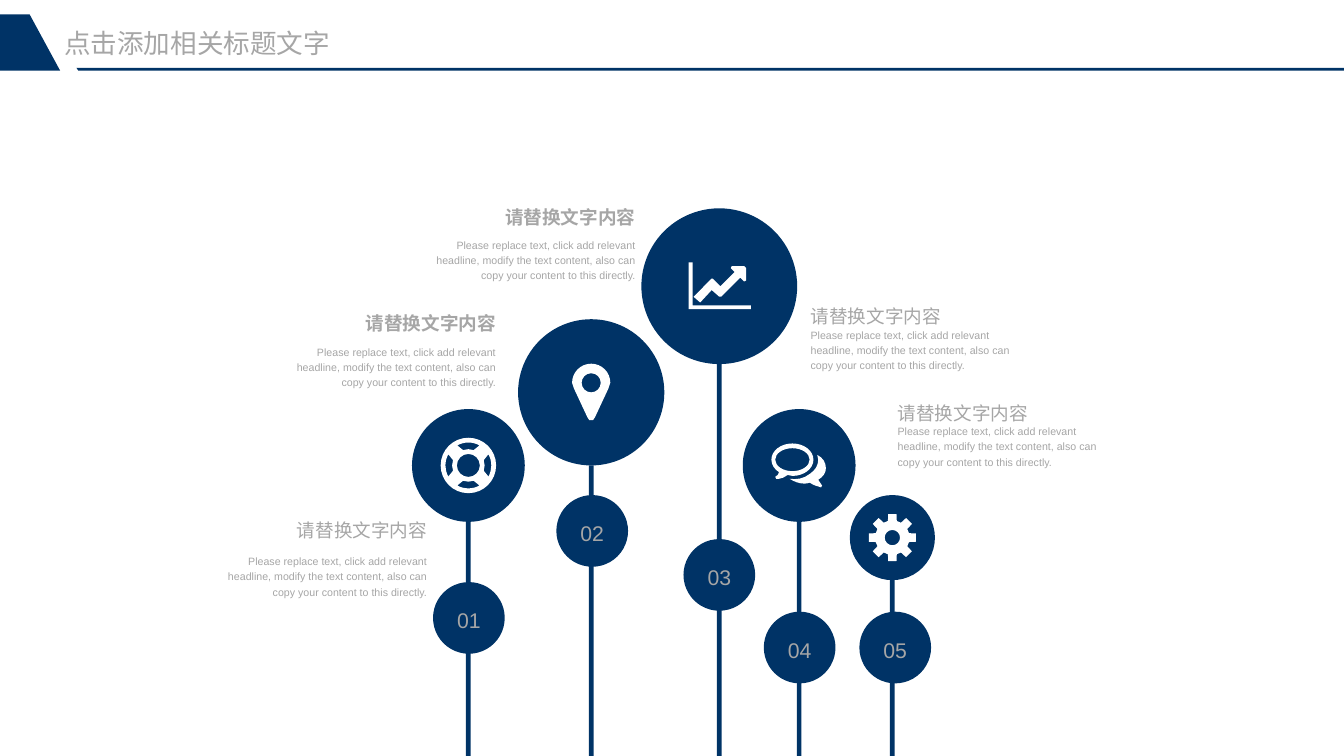
from math import cos, sin, tan, radians

from lxml import etree
from pptx import Presentation
from pptx import util as u
from pptx.dml.color import RGBColor
from pptx.enum import shapes, text
from pptx.oxml.ns import qn

COLORS = {"navy": "003366", "grey": "A6A6A6", "white": "FFFFFF"}
FONT = "Arial"
WIDTH, HEIGHT = 14.06, 7.91
QUARTERS = (0, 90, 180, 270, 360)
HEADING = "请替换文字内容"
BODY = ("Please replace text, click add relevant headline, modify the text "
        "content, also can copy your content to this directly.")


def bend(*points):
    """Mark points, three to a curve, as Bezier controls and ends."""
    return [(x, y, True) for x, y in points]


def arc(rx, ry, angles=QUARTERS, cx=0, cy=0):
    """Return an elliptical arc with one Bezier curve between neighbouring angles."""
    def at(a, slope=0):
        return (cx + rx * (cos(a) - slope * sin(a)), cy + ry * (sin(a) + slope * cos(a)))
    turns = [radians(a) for a in angles]
    points = [at(turns[0])]
    for a, b in zip(turns, turns[1:]):
        k = 4 / 3 * tan((b - a) / 4)
        points += bend(at(a, k), at(b, -k), at(b))
    return points


def chart_icon():
    """Return the contours of two axes and a rising arrow."""
    axes = [(.33, .24), (-.32, .24), (-.32, -.25), (-.28, -.25), (-.28, .2), (.33, .2)]
    arrow = [(.28, -.06), (.26, -.05), (.22, -.09), (.02, .11), (0, .11), (-.08, .04),
             (-.2, .17), (-.27, .11), (-.08, -.08), (-.07, -.08), (.01, 0), (.16, -.15),
             (.12, -.19), (.13, -.21), (.26, -.21), (.28, -.19)]
    return [axes, arrow]


def pin_icon():
    """Return the contours of a map pin with a round hole."""
    tip = [(.18, -.04), (.04, .26), (.02, .29), (-.02, .29), (-.04, .26), (-.18, -.04)]
    return [arc(.2, .2, (180, 270, 360), cy=-.1) + tip, arc(.1, .1, cy=-.1)]


def buoy_icon():
    """Return the contours of a lifebuoy with four windows."""
    windows = [arc(.24, .24, (a - 29, a + 29)) + arc(.17, .17, (a + 19, a - 19))
               for a in QUARTERS[:4]]
    return [arc(.29, .29), arc(.12, .12)] + windows


def chat_icon():
    """Return the contours of two overlapping speech bubbles."""
    front = (arc(.22, .17, (128, 180, 270, 360, 450), -.07, -.06) + [(-.12, .1)]
             + bend((-.15, .12), (-.18, .14), (-.21, .14)) + [(-.24, .14), (-.25, .12)]
             + bend((-.23, .11), (-.21, .09), (-.21, .07)))
    back = ([(.19, -.11)]
            + bend((.25, -.08), (.28, -.03), (.28, .03), (.28, .08), (.25, .12), (.2, .15))
            + [(.24, .21), (.23, .23), (.2, .22)]
            + bend((.16, .21), (.14, .2), (.11, .18), (.1, .19), (.07, .19), (.05, .19),
                   (0, .19), (-.05, .17), (-.1, .14))
            + bend((-.03, .15), (.05, .14), (.11, .09), (.17, .05), (.2, 0), (.2, -.06),
                   (.2, -.08), (.2, -.09), (.19, -.11)))
    return [front, arc(.18, .12, cx=-.07, cy=-.06), back]


def gear_icon():
    """Return the contours of an eight-toothed gear with a round hole."""
    tooth = [(.18, -15), (.25, -10), (.25, 10), (.18, 15)]
    rim = [(r * cos(radians(a + turn)), r * sin(radians(a + turn)))
           for turn in range(0, 360, 45) for r, a in tooth]
    return [rim, arc(.08, .08)]


def paint(sp, color):
    """Give a shape a plain fill without line or shadow."""
    sp.shadow.inherit = False
    sp.fill.solid()
    sp.fill.fore_color.rgb = RGBColor.from_string(COLORS[color])
    sp.line.fill.background()


def add_outline(s, x, y, contours, color):
    """Draw closed contours as one freeform around the point x, y."""
    placed = [[(u.Inches(x + c[0]), u.Inches(y + c[1])) for c in cs] for cs in contours]
    builder = s.shapes.build_freeform(*placed[0][0])
    builder.add_line_segments(placed[0][1:], close=True)
    for c in placed[1:]:
        builder.move_to(*c[0])
        builder.add_line_segments(c[1:], close=True)
    sp = builder.convert_to_shape()
    paint(sp, color)
    route = next(sp._element.iter(qn("a:path")))
    flags = [len(c) == 3 for cs in contours for c in [*cs, (0, 0)]]
    curved = [step for step, flag in zip(list(route), flags) if flag]
    for steps in zip(*[iter(curved)] * 3):
        curve = etree.SubElement(route, qn("a:cubicBezTo"))
        route.replace(steps[0], curve)
        for step in steps:
            curve.append(step[0])
        for step in steps[1:]:
            route.remove(step)


def add_solid(s, kind, x, y, w, h):
    """Add a navy preset shape."""
    sp = s.shapes.add_shape(kind, u.Inches(x), u.Inches(y), u.Inches(w), u.Inches(h))
    paint(sp, "navy")
    return sp


def set_text(sp, words, size, align, anchor, bold=False, spacing=1.2, before=0):
    """Write one grey paragraph without insets and return it."""
    tf = sp.text_frame
    tf.margin_left = tf.margin_top = tf.margin_right = tf.margin_bottom = 0
    tf.vertical_anchor = anchor
    tf.text = words
    p = tf.paragraphs[0]
    p.alignment = align
    p.line_spacing = spacing
    p.space_before = u.Pt(before)
    font = p.runs[0].font
    font.name, font.size, font.bold = FONT, u.Pt(size), bold
    font.color.rgb = RGBColor.from_string(COLORS["grey"])
    return p


def add_label(s, x, y, w, h, words, size, align, anchor, wrap=True, **style):
    """Add a text box that grows with its text and return its paragraph."""
    sp = s.shapes.add_textbox(u.Inches(x), u.Inches(y), u.Inches(w), u.Inches(h))
    p = set_text(sp, words, size, align, anchor, **style)
    sp.text_frame.word_wrap = wrap
    sp.text_frame.auto_size = text.MSO_AUTO_SIZE.SHAPE_TO_FIT_TEXT
    return p


def add_header(s, x, y, w, h):
    """Draw the rule, the slanted tab and the title in the given box."""
    add_outline(s, x, y, [[(.8, h - .03), (w, h - .03), (w, h), (.82, h)]], "navy")
    add_outline(s, x, y, [[(.31, 0), (.63, h), (0, h), (0, 0)]], "navy")
    p = add_label(s, x + .67, y + .13, 3.35, .34, "点击添加相关标题文字", 20,
                  text.PP_ALIGN.LEFT, text.MSO_ANCHOR.TOP, spacing=1.0, before=4)
    p.space_after = u.Pt(6)


def add_branch(s, x, y, d, icon, badge_x, badge_y, number):
    """Draw a stem from the disc's box to the slide's foot, the disc and its badge."""
    mid, foot = x + d / 2, y + d
    add_solid(s, shapes.MSO_SHAPE.RECTANGLE, mid - .025, foot, .05, HEIGHT - foot)
    badge = add_solid(s, shapes.MSO_SHAPE.OVAL, badge_x, badge_y, .75, .75)
    set_text(badge, number, 16, text.PP_ALIGN.CENTER, text.MSO_ANCHOR.MIDDLE)
    add_solid(s, shapes.MSO_SHAPE.OVAL, x, y, d, d)
    add_outline(s, mid, y + d / 2, icon(), "white")


def add_caption(s, edge, y, body_gap, on_left, bold):
    """Write a heading and its body, flush with an edge on either side."""
    align = text.PP_ALIGN.RIGHT if on_left else text.PP_ALIGN.LEFT
    anchor = text.MSO_ANCHOR.MIDDLE if on_left else text.MSO_ANCHOR.TOP
    head_w, body_w = 1.37, 2.32 if on_left else 2.28
    head_x, body_x = (edge - head_w, edge - body_w) if on_left else (edge, edge)
    add_label(s, head_x, y, head_w, .26, HEADING, 14, align, anchor,
              wrap=False, bold=bold, before=2.8)
    add_label(s, body_x, y + body_gap, body_w, .48, BODY, 8, align, anchor)


def main():
    """Build the slide and save it."""
    prs = Presentation()
    prs.slide_width, prs.slide_height = u.Inches(WIDTH), u.Inches(HEIGHT)
    s = prs.slides.add_slide(prs.slide_layouts[6])
    captions = [(6.65, 2.12, .35, True, True), (5.19, 3.23, .36, True, True),
                (4.47, 5.39, .39, True, False), (8.48, 3.14, .27, False, False),
                (9.39, 4.16, .26, False, False)]
    for caption in captions:
        add_caption(s, *caption)
    branches = [(4.31, 4.28, 1.18, buoy_icon, 4.53, 6.09),
                (5.42, 3.34, 1.53, pin_icon, 5.82, 5.18),
                (6.71, 2.18, 1.63, chart_icon, 7.15, 5.64),
                (7.77, 4.28, 1.18, chat_icon, 7.99, 6.4),
                (8.89, 5.18, .89, gear_icon, 8.99, 6.4)]
    for i, branch in enumerate(branches, 1):
        add_branch(s, *branch, f"{i:02d}")
    add_header(s, 0, .15, WIDTH, .59)
    prs.save("out.pptx")


if __name__ == "__main__":
    main()
